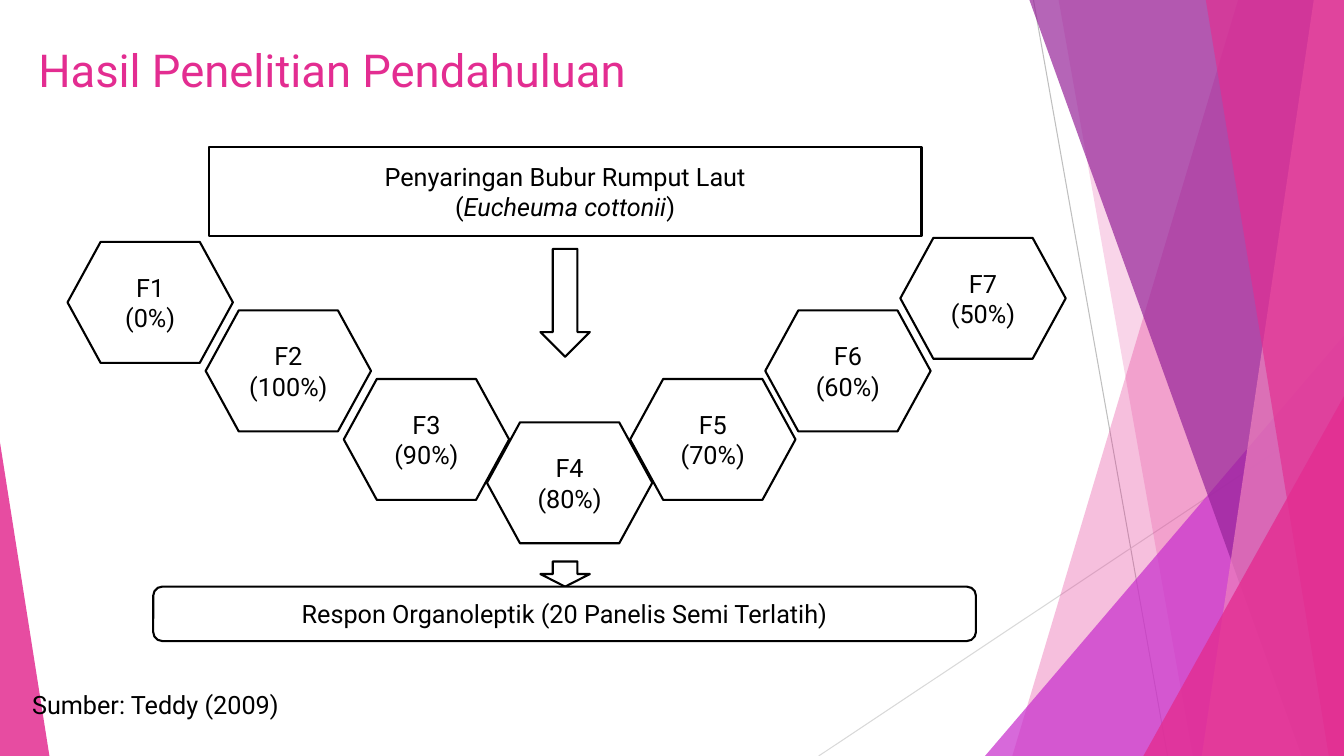
from pptx import Presentation
from pptx.dml.color import RGBColor
from pptx.enum.shapes import MSO_CONNECTOR, MSO_SHAPE
from pptx.enum.text import MSO_ANCHOR, MSO_AUTO_SIZE, PP_ALIGN
from pptx.oxml.ns import qn
from pptx.oxml.xmlchemy import OxmlElement
from pptx.util import Emu, Pt

PX = 9144
WIDTH, HEIGHT = 1333, 750
FONT = "Roboto"
COLORS = {
    "pink": "E32D91",
    "rose": "EE81BD",
    "violet": "C830CC",
    "purple": "962499",
    "ink": "000000",
    "paper": "FFFFFF",
    "gray": "BFBFBF",
    "pale": "D9D9D9",
}
RECT, ROUNDED = MSO_SHAPE.RECTANGLE, MSO_SHAPE.ROUNDED_RECTANGLE
TRIANGLE, DOWN_ARROW = MSO_SHAPE.ISOSCELES_TRIANGLE, MSO_SHAPE.DOWN_ARROW
HEXAGON = MSO_SHAPE.FLOWCHART_PREPARATION
STRAIGHT = MSO_CONNECTOR.STRAIGHT
LEFT, CENTER = PP_ALIGN.LEFT, PP_ALIGN.CENTER
TOP, MIDDLE = MSO_ANCHOR.TOP, MSO_ANCHOR.MIDDLE
NO_FIT = MSO_AUTO_SIZE.NONE

FORMULAS = [
    ("F1 (0%)", 0, 94),
    ("F2 (100%)", 137, 162),
    ("F3 (90%)", 274, 230),
    ("F4 (80%)", 416, 273),
    ("F5 (70%)", 558, 230),
    ("F6 (60%)", 692, 162),
    ("F7 (50%)", 826, 90),
]


def px(*lengths):
    """Turn px lengths into EMU."""
    return [Emu(length * PX) for length in lengths]


def rgb(name):
    """Look up a named colour."""
    return RGBColor.from_string(COLORS[name])


def write(shape, text, size=18, color="ink", align=CENTER, anchor=MIDDLE):
    """Fill a shape with text; parts between asterisks are italic."""
    frame = shape.text_frame
    frame.word_wrap = True
    frame.auto_size = NO_FIT
    frame.vertical_anchor = anchor
    for index, line in enumerate(text.split("\n")):
        paragraph = frame.add_paragraph() if index else frame.paragraphs[0]
        paragraph.alignment = align
        for order, part in enumerate(line.split("*")):
            run = paragraph.add_run()
            run.text = part
            run.font.name = FONT
            run.font.size = Pt(size)
            run.font.italic = order % 2 == 1
            run.font.color.rgb = rgb(color)


def tint(shape, color, opacity):
    """Give a shape a see-through fill without outline or shadow."""
    shape.shadow.inherit = False
    shape.fill.solid()
    shape.fill.fore_color.rgb = rgb(color)
    shape.line.fill.background()
    alpha = OxmlElement("a:alpha")
    alpha.set("val", str(opacity * 1000))
    shape._element.spPr.find(".//" + qn("a:srgbClr")).append(alpha)


def add_ray(slide, start, end, color):
    """Draw a thin straight line."""
    ray = slide.shapes.add_connector(STRAIGHT, *px(*start, *end))
    ray.line.color.rgb = rgb(color)
    ray.line.width = Pt(0.75)
    ray._element.spPr.append(OxmlElement("a:effectLst"))


def add_shard(slide, top_x, bottom_x, color, opacity):
    """Draw a slanted full-height band reaching the right edge."""
    builder = slide.shapes.build_freeform(top_x, 0, scale=PX)
    builder.add_line_segments([(WIDTH, 0), (WIDTH, HEIGHT), (bottom_x, HEIGHT)])
    tint(builder.convert_to_shape(), color, opacity)


def add_corner(slide, left, width, height, peak, color, opacity):
    """Draw a right triangle standing on the bottom edge."""
    corner = slide.shapes.add_shape(TRIANGLE, *px(left, HEIGHT - height, width, height))
    corner.adjustments[0] = peak
    tint(corner, color, opacity)


def add_backdrop(slide):
    """Draw the faceted decoration on both sides of the slide."""
    add_ray(slide, (1025, 0), (1158, HEIGHT), "gray")
    add_ray(slide, (WIDTH, 403), (812, HEIGHT), "pale")
    add_shard(slide, 1228, 1004, "pink", 30)
    add_shard(slide, 1050, 1183, "pink", 20)
    add_corner(slide, WIDTH - 356, 356, 417, 1, "violet", 72)
    add_shard(slide, 1021, 1291, "purple", 70)
    add_shard(slide, 1303, 1192, "rose", 70)
    add_shard(slide, 1196, 1318, "pink", 65)
    add_corner(slide, WIDTH - 199, 199, 357, 1, "pink", 80)
    add_corner(slide, 0, 49, 311, 0, "pink", 85)


def add_title(slide, left, top, width, height):
    """Place and format the title placeholder."""
    title = slide.shapes.title
    title.left, title.top, title.width, title.height = px(left, top, width, height)
    write(title, "Hasil Penelitian Pendahuluan", size=32.4, color="pink", align=LEFT)


def add_step(slide, kind, left, top, width, height, text=""):
    """Draw one outlined part of the flow."""
    step = slide.shapes.add_shape(kind, *px(left, top, width, height))
    step.shadow.inherit = False
    step.fill.solid()
    step.fill.fore_color.rgb = rgb("paper")
    step.line.color.rgb = rgb("ink")
    step.line.width = Pt(1.5)
    if text:
        write(step, text)


def add_flow(slide, left, top):
    """Draw the flow from filtering through the formulas to the response."""
    filtering = "Penyaringan Bubur Rumput Laut\n(*Eucheuma cottonii*)"
    response = "Respon Organoleptik (20 Panelis Semi Terlatih)"
    add_step(slide, RECT, left + 140, top, 707, 88, filtering)
    add_step(slide, DOWN_ARROW, left + 469, top + 101, 49, 107)
    for formula, x, y in FORMULAS:
        add_step(slide, HEXAGON, left + x, top + y, 164, 120, formula)
    add_step(slide, DOWN_ARROW, left + 469, top + 411, 49, 25)
    add_step(slide, ROUNDED, left + 85, top + 436, 816, 54, response)


def add_citation(slide, left, top, width, height):
    """Write the source of the data."""
    citation = slide.shapes.add_textbox(*px(left, top, width, height))
    write(citation, "Sumber: Teddy (2009)", align=LEFT, anchor=TOP)


def main():
    """Build and save the slide."""
    deck = Presentation()
    deck.slide_width, deck.slide_height = px(WIDTH, HEIGHT)
    slide = deck.slides.add_slide(deck.slide_layouts[5])
    add_backdrop(slide)
    add_title(slide, 28, 35, 940, 68)
    add_flow(slide, 67, 146)
    add_citation(slide, 22, 679, 304, 40)
    deck.save("out.pptx")


if __name__ == "__main__":
    main()
